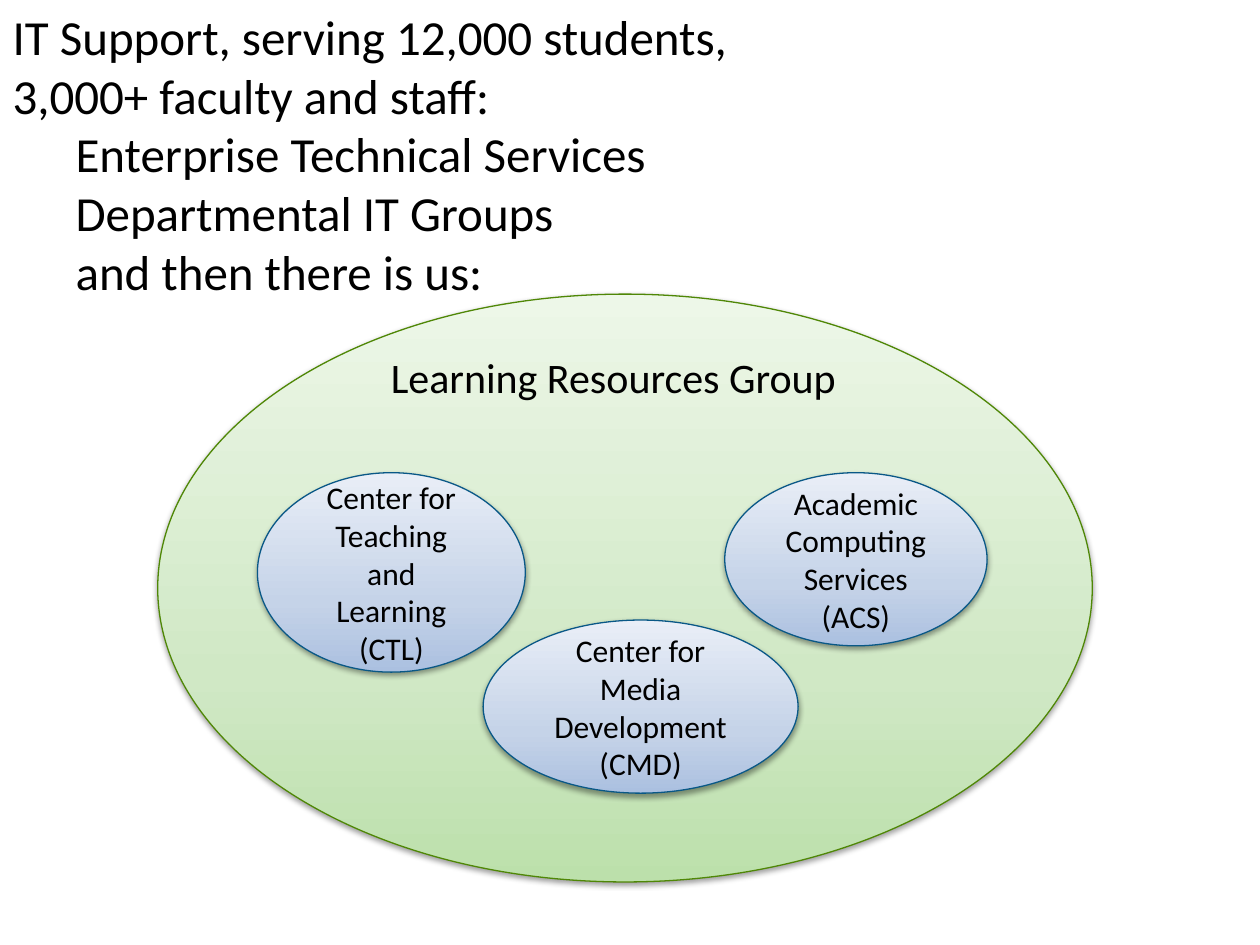
from lxml import etree
from pptx import Presentation
from pptx import util as u
from pptx.dml.color import RGBColor
from pptx.enum import shapes, text
from pptx.oxml import parse_xml
from pptx.oxml.ns import nsdecls, qn

BLACK = RGBColor(0x00, 0x00, 0x00)
GREEN_LINE = RGBColor(0x4F, 0x87, 0x06)
GREENS = (RGBColor(0xBC, 0xE0, 0xAB), RGBColor(0xD0, 0xE8, 0xC5), RGBColor(0xED, 0xF7, 0xE8))
BLUE_LINE = RGBColor(0x09, 0x58, 0x86)
BLUES = (RGBColor(0xAB, 0xC0, 0xE0), RGBColor(0xC5, 0xD3, 0xE8), RGBColor(0xE9, 0xEE, 0xF7))
STOPS = (0, 35, 100)

# Boxes are left, top, width, height in centimetres.
INTRO_BOX = (0, 0, 18.62, 6.25)
GROUP_BOX = (3.18, 5.93, 18.84, 11.85)
LABEL_BOX = (4.45, 1.04, 9.58, 1.27)  # relative to the group
CENTERS = [  # relative to the group
    ("Center for Teaching and Learning (CTL)", (2.01, 3.6, 5.4, 4.02)),
    ("Academic Computing Services (ACS)", (11.43, 3.6, 5.29, 3.49)),
    ("Center for Media Development (CMD)", (6.56, 6.57, 6.35, 3.49)),
]
INTRO = [
    ("IT Support, serving 12,000 students,", 0),
    ("3,000+ faculty and staff:", 0),
    ("Enterprise Technical Services", 1.27),
    ("Departmental IT Groups", 1.27),
    ("and then there is us:", 1.27),
]


def set_all(obj, **values):
    for name, value in values.items():
        setattr(obj, name, value)


def cm_box(box, origin=(0, 0)):
    left, top, width, height = box
    return [u.Cm(v) for v in (origin[0] + left, origin[1] + top, width, height)]


def write(p, words, size):
    r = p.add_run()
    r.text = words
    set_all(r.font, name="Calibri", size=u.Pt(size))
    r.font.color.rgb = BLACK


def add_ellipse(slide, box, colors, line):
    """Ellipse with a three-stop vertical gradient and a soft shadow below."""
    sp = slide.shapes.add_shape(shapes.MSO_SHAPE.OVAL, *box)
    sp.fill.gradient()
    sp.fill.gradient_angle = 90
    stops = sp._element.spPr.find(".//" + qn("a:gsLst"))
    for stop in list(stops):
        stops.remove(stop)
    for pos, color in zip(STOPS, colors):
        gs = etree.SubElement(stops, qn("a:gs"), pos=str(pos * 1000))
        etree.SubElement(gs, qn("a:srgbClr"), val=str(color))
    sp.line.color.rgb = line
    sp.line.width = u.Pt(0.75)
    sp.shadow.inherit = False
    sp._element.spPr.find(qn("a:effectLst")).append(parse_xml(
        f'<a:outerShdw {nsdecls("a")} blurRad="40000" dist="20000" dir="5400000" '
        'rotWithShape="0"><a:srgbClr val="000000"><a:alpha val="38000"/>'
        '</a:srgbClr></a:outerShdw>'))
    return sp


def add_intro(slide, box):
    sp = slide.placeholders[1]
    set_all(sp, **dict(zip(("left", "top", "width", "height"), cm_box(box))))
    tf = sp.text_frame
    set_all(tf, word_wrap=True, auto_size=text.MSO_AUTO_SIZE.NONE,
            vertical_anchor=text.MSO_ANCHOR.TOP)
    for i, (words, indent) in enumerate(INTRO):
        p = tf.add_paragraph() if i else tf.paragraphs[0]
        p.space_before = u.Pt(0)
        pPr = p._p.get_or_add_pPr()
        pPr.set("marL", str(u.Cm(indent)))
        pPr.set("indent", "0")
        etree.SubElement(pPr, qn("a:buNone"))
        write(p, words, 28)


def add_group(slide, box):
    origin = box[:2]
    add_ellipse(slide, cm_box(box), GREENS, GREEN_LINE)
    for words, center_box in CENTERS:
        sp = add_ellipse(slide, cm_box(center_box, origin), BLUES, BLUE_LINE)
        tf = sp.text_frame
        set_all(tf, word_wrap=True, vertical_anchor=text.MSO_ANCHOR.MIDDLE)
        p = tf.paragraphs[0]
        p.alignment = text.PP_ALIGN.CENTER
        write(p, words, 18)
    label = slide.shapes.add_textbox(*cm_box(LABEL_BOX, origin))
    tf = label.text_frame
    set_all(tf, word_wrap=False, auto_size=text.MSO_AUTO_SIZE.SHAPE_TO_FIT_TEXT)
    write(tf.paragraphs[0], "Learning Resources Group", 24)


def main():
    prs = Presentation()
    set_all(prs, slide_width=u.Cm(25.4), slide_height=u.Cm(19.05))
    slide = prs.slides.add_slide(prs.slide_layouts[1])
    title = slide.shapes.title._element
    title.getparent().remove(title)
    add_intro(slide, INTRO_BOX)
    add_group(slide, GROUP_BOX)
    prs.save("out.pptx")


if __name__ == "__main__":
    main()
